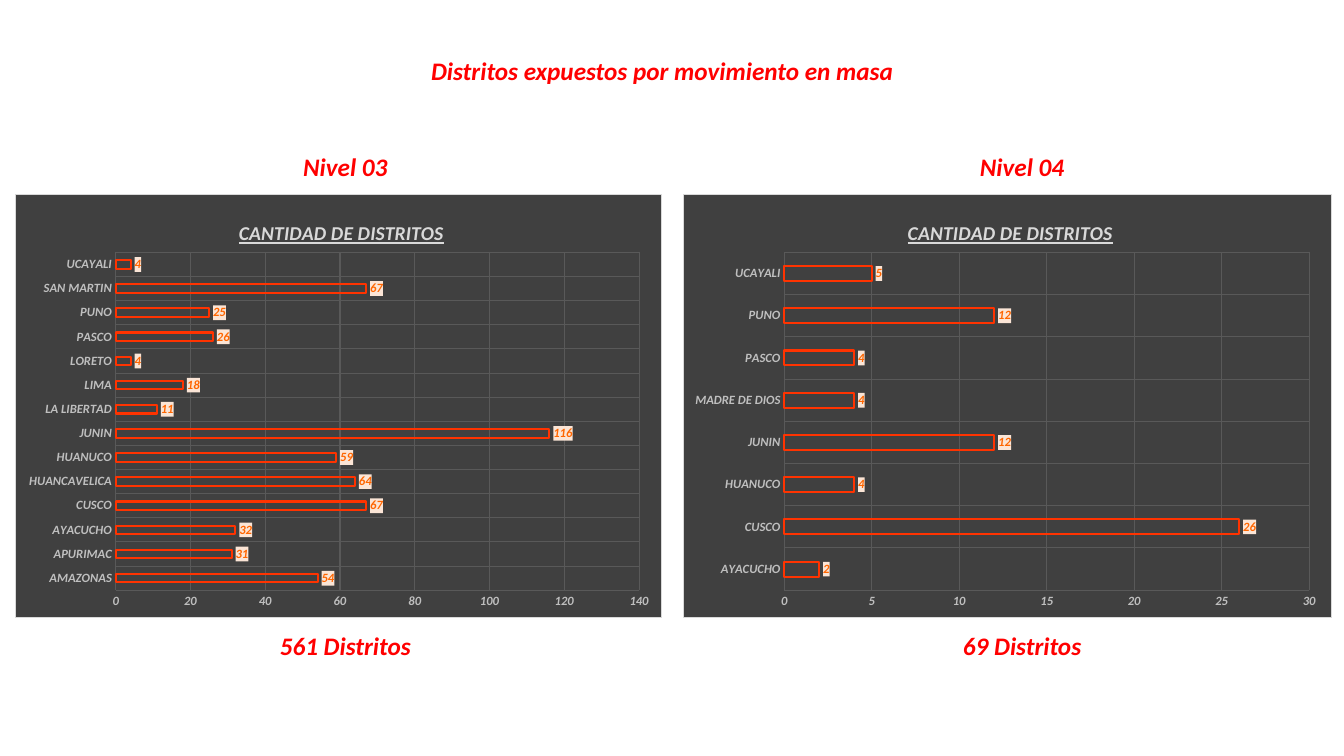
from lxml import etree
from pptx import Presentation
from pptx.chart.data import CategoryChartData
from pptx.dml.color import RGBColor
from pptx.enum.chart import XL_CHART_TYPE as ChartType, XL_LABEL_POSITION as LabelPos
from pptx.enum.chart import XL_TICK_MARK as TickMark
from pptx.enum.text import MSO_AUTO_SIZE as AutoSize, PP_ALIGN as Align
from pptx.oxml import parse_xml
from pptx.oxml.ns import nsdecls, qn
from pptx.util import Cm, Pt

FONT = "Calibri"
RED, DARK, GRID = "FF0000", "404040", "595959"
HEADING_H = 1.02

LEVEL_3 = {
    "AMAZONAS": 54, "APURIMAC": 31, "AYACUCHO": 32, "CUSCO": 67,
    "HUANCAVELICA": 64, "HUANUCO": 59, "JUNIN": 116, "LA LIBERTAD": 11,
    "LIMA": 18, "LORETO": 4, "PASCO": 26, "PUNO": 25, "SAN MARTIN": 67,
    "UCAYALI": 4,
}
LEVEL_4 = {
    "AYACUCHO": 2, "CUSCO": 26, "HUANUCO": 4, "JUNIN": 12,
    "MADRE DE DIOS": 4, "PASCO": 4, "PUNO": 12, "UCAYALI": 5,
}


def rgb(color):
    return RGBColor.from_string(color)


def style_font(font, size, color):
    font.name = FONT
    font.size = Pt(size)
    font.bold = font.italic = True
    font.color.rgb = rgb(color)


def add_heading(s, text, center, top, width, wrap=True):
    """Place a red heading centred on a horizontal position, in cm."""
    box = s.shapes.add_textbox(Cm(center - width / 2), Cm(top), Cm(width), Cm(HEADING_H))
    tf = box.text_frame
    tf.word_wrap = wrap
    tf.auto_size = AutoSize.SHAPE_TO_FIT_TEXT
    p = tf.paragraphs[0]
    p.alignment = Align.CENTER
    r = p.add_run()
    r.text = text
    style_font(r.font, 18, RED)


def shape_props(fill, line=None):
    """Build the c:spPr of a chart part with a solid fill and an optional border."""
    solid = '<a:solidFill><a:srgbClr val="{}"/></a:solidFill>'
    border = f'<a:ln w="9525">{solid.format(line)}</a:ln>' if line else "<a:ln><a:noFill/></a:ln>"
    return parse_xml(f'<c:spPr {nsdecls("c", "a")}>{solid.format(fill)}{border}</c:spPr>')


def set_layout(parent, index, inner=False, **fractions):
    """Fix the place of a chart part as fractions of the chart area."""
    for old in parent.findall(qn("c:layout")):
        parent.remove(old)
    layout = etree.Element(qn("c:layout"))
    manual = etree.SubElement(layout, qn("c:manualLayout"))
    if inner:
        etree.SubElement(manual, qn("c:layoutTarget")).set("val", "inner")
    for tag in ("xMode", "yMode"):
        etree.SubElement(manual, qn(f"c:{tag}")).set("val", "edge")
    for tag, value in fractions.items():
        etree.SubElement(manual, qn(f"c:{tag}")).set("val", str(value))
    parent.insert(index, layout)


def style_axis(axis):
    axis.major_tick_mark = axis.minor_tick_mark = TickMark.NONE
    axis.has_major_gridlines = True
    grid = axis.major_gridlines.format.line
    grid.color.rgb = rgb(GRID)
    grid.width = Pt(0.75)
    axis.format.line.fill.background()
    style_font(axis.tick_labels.font, 9, "BFBFBF")


def style_bars(plot):
    plot.gap_width = 182
    plot.overlap = -50
    plot.vary_by_categories = False
    bars = plot.series[0]
    bars.invert_if_negative = False
    bars.format.fill.background()
    bars.format.line.color.rgb = rgb("FF3300")
    bars.format.line.width = Pt(1.5)
    labels = bars.data_labels
    labels.show_value = True
    labels.position = LabelPos.OUTSIDE_END
    labels.number_format = "#,##0"
    labels.number_format_is_linked = False
    style_font(labels.font, 9, "FF6600")
    labels._element.find(qn("c:numFmt")).addnext(shape_props("FBE5D6"))


def add_district_chart(s, counts, left, top, width, height):
    data = CategoryChartData(number_format="#,##0")
    data.categories = list(counts)
    data.add_series("Series 1", list(counts.values()))
    chart = s.shapes.add_chart(ChartType.BAR_CLUSTERED, Cm(left), Cm(top),
                               Cm(width), Cm(height), data).chart
    chart.has_legend = False
    chart.font.name = FONT
    chart.font.size = Pt(10)

    chart.has_title = True
    r = chart.chart_title.text_frame.paragraphs[0].add_run()
    r.text = "CANTIDAD DE DISTRITOS"
    style_font(r.font, 14, "D9D9D9")
    r.font.underline = True

    for axis in (chart.category_axis, chart.value_axis):
        style_axis(axis)
    chart.value_axis.minimum_scale = 0
    chart.value_axis.tick_labels.number_format = "#,##0"
    chart.value_axis.tick_labels.number_format_is_linked = False
    style_bars(chart.plots[0])

    body = chart._chartSpace.find(qn("c:chart"))
    body.addnext(shape_props(DARK, "D9D9D9"))
    set_layout(body.find(qn("c:title")), 1, x=0.34, y=0.05)
    set_layout(body.find(qn("c:plotArea")), 0, inner=True, x=0.155, y=0.136, w=0.81, h=0.8)


def add_level_panel(s, level, total, counts, left, top, width, height, shift):
    """Place a chart with its level above and its total below, both moved by shift."""
    center = left + width / 2 + shift
    add_heading(s, level, center, top - 1.22, 2.7)
    add_district_chart(s, counts, left, top, width, height)
    add_heading(s, total, center, top + height + 0.2, 4.05)


def main():
    prs = Presentation()
    prs.slide_width, prs.slide_height = Cm(33.87), Cm(19.05)
    s = prs.slides.add_slide(prs.slide_layouts[6])
    add_heading(s, "Distritos expuestos por movimiento en masa", 16.69, 1.27, 12.29, wrap=False)
    add_level_panel(s, "Nivel 03", "561 Distritos", LEVEL_3, 0.38, 4.9, 16.31, 10.67, 0.17)
    add_level_panel(s, "Nivel 04", "69 Distritos", LEVEL_4, 17.22, 4.9, 16.36, 10.67, 0.36)
    prs.save("out.pptx")


if __name__ == "__main__":
    main()
